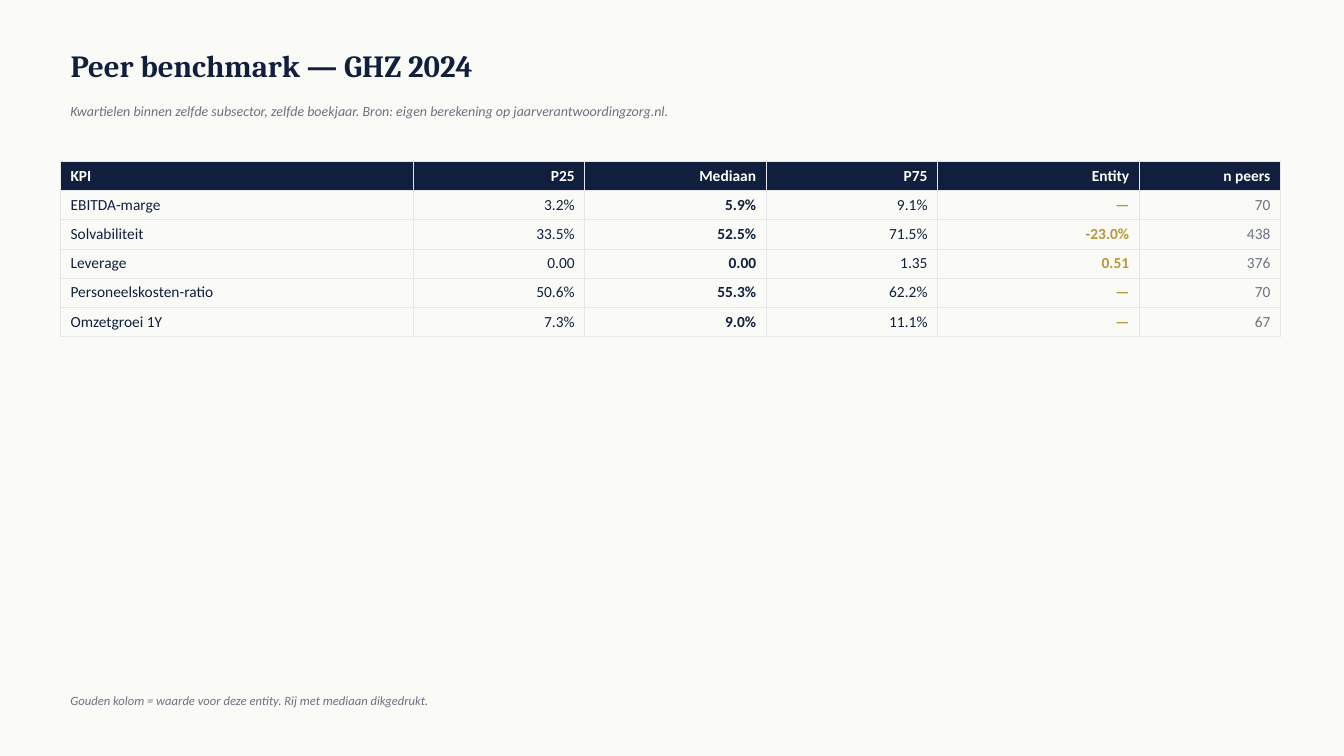
from lxml import etree
from pptx import Presentation
from pptx.dml.color import RGBColor
from pptx.enum import text
from pptx.oxml import ns
from pptx.util import Inches, Pt

NAVY, GREY, GOLD, WHITE = "0F1F3D", "6B7280", "B8973B", "FFFFFF"
PAPER, RULE = "FAFAF7", "E5E7EB"

HEAD = ["KPI", "P25", "Mediaan", "P75", "Entity", "n peers"]
ROWS = [
    ["EBITDA-marge", "3.2%", "5.9%", "9.1%", "—", "70"],
    ["Solvabiliteit", "33.5%", "52.5%", "71.5%", "-23.0%", "438"],
    ["Leverage", "0.00", "0.00", "1.35", "0.51", "376"],
    ["Personeelskosten-ratio", "50.6%", "55.3%", "62.2%", "—", "70"],
    ["Omzetgroei 1Y", "7.3%", "9.0%", "11.1%", "—", "67"],
]
WIDTHS = [3.5, 1.7, 1.8, 1.7, 2, 1.4]
INKS = [NAVY, NAVY, NAVY, NAVY, GOLD, GREY]
BOLD = {"Mediaan", "Entity"}


def color(code):
    return RGBColor.from_string(code)


class Deck:
    left, width = 0.6, 12
    serif, sans = "Cambria", "Calibri"

    def __init__(self):
        self.prs = Presentation()
        self.prs.slide_width = Inches(13.33)
        self.prs.slide_height = Inches(7.5)
        self.slide = self.prs.slides.add_slide(self.prs.slide_layouts[5])
        fill = self.slide.background.fill
        fill.solid()
        fill.fore_color.rgb = color(PAPER)

    def style(self, para, size, ink, face=None, bold=False, italic=False):
        font = para.font
        font.name, font.size = face or self.sans, Pt(size)
        font.bold, font.italic = bold, italic
        font.color.rgb = color(ink)

    def label(self, shape, words):
        """Fill a one-line frame and return its paragraph."""
        frame = shape.text_frame
        frame.text = words
        frame.word_wrap = True
        frame.auto_size = text.MSO_AUTO_SIZE.NONE
        frame.vertical_anchor = text.MSO_ANCHOR.MIDDLE
        para = frame.paragraphs[0]
        para.alignment = text.PP_ALIGN.LEFT
        para.line_spacing = 1.0
        return para

    def title(self, words, top, height):
        shape = self.slide.shapes.title
        shape.left, shape.top = Inches(self.left), Inches(top)
        shape.width, shape.height = Inches(self.width), Inches(height)
        self.style(self.label(shape, words), 22, NAVY, self.serif, bold=True)

    def note(self, words, top, size):
        box = self.slide.shapes.add_textbox(
            Inches(self.left), Inches(top), Inches(self.width), Inches(0.3))
        self.style(self.label(box, words), size, GREY, italic=True)

    def border(self, cell):
        props = cell._tc.get_or_add_tcPr()
        for side in ("a:lnL", "a:lnR", "a:lnT", "a:lnB"):
            line = etree.SubElement(props, ns.qn(side), w=str(Pt(0.5)))
            fill = etree.SubElement(line, ns.qn("a:solidFill"))
            etree.SubElement(fill, ns.qn("a:srgbClr"), val=RULE)

    def cell(self, cell, words, ink, bold, right, back=None):
        self.border(cell)
        if back:
            cell.fill.solid()
            cell.fill.fore_color.rgb = color(back)
        else:
            cell.fill.background()
        cell.text = words
        para = cell.text_frame.paragraphs[0]
        para.alignment = text.PP_ALIGN.RIGHT if right else text.PP_ALIGN.LEFT
        self.style(para, 11, ink, bold=bold)

    def table(self, top, step):
        count = len(ROWS) + 1
        table = self.slide.shapes.add_table(
            count, len(HEAD), Inches(self.left), Inches(top),
            Inches(sum(WIDTHS)), Inches(step * count)).table
        table.horz_banding = False
        for row in table.rows:
            row.height = Inches(step)
        for c, name in enumerate(HEAD):
            table.columns[c].width = Inches(WIDTHS[c])
            self.cell(table.cell(0, c), name, WHITE, True, c > 0, NAVY)
            for r, row in enumerate(ROWS, 1):
                self.cell(table.cell(r, c), row[c], INKS[c],
                          name in BOLD, c > 0)


def main():
    deck = Deck()
    deck.title("Peer benchmark — GHZ 2024", 0.4, 0.5)
    deck.note("Kwartielen binnen zelfde subsector, zelfde boekjaar. "
              "Bron: eigen berekening op jaarverantwoordingzorg.nl.", 0.95, 10)
    deck.table(1.6, 0.29)
    deck.note("Gouden kolom = waarde voor deze entity. "
              "Rij met mediaan dikgedrukt.", 6.8, 9)
    deck.prs.save("out.pptx")


if __name__ == "__main__":
    main()
